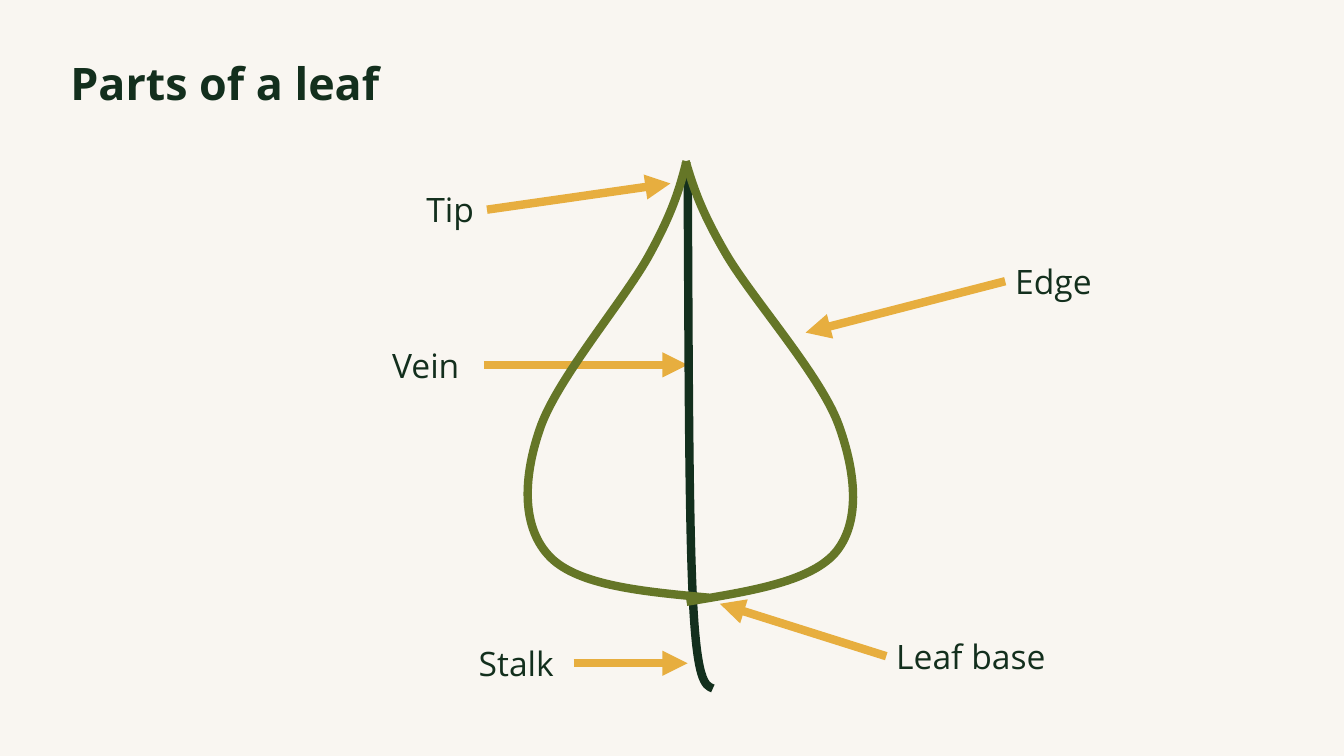
from dataclasses import dataclass

import pptx
import pptx.dml.color
import pptx.enum.shapes
import pptx.enum.text
import pptx.oxml
import pptx.oxml.ns
import pptx.util
from pptx.util import Inches

FONT = "Open Sans"
CREAM, DARK_GREEN, LEAF_GREEN, AMBER = "F9F6F1", "132F1D", "657627", "E7AE3F"
LINE_WIDTH = 6
LABEL_HEIGHT = 0.5
LEFT_SIDE, RIGHT_SIDE = 1, 3

Point = tuple[float, float]


@dataclass
class Label:
    text: str
    left: float
    top: float
    width: float
    arrow_side: int
    target: Point
    wrap: bool = False


@dataclass
class Curve:
    """A start point followed by three points for each Bezier segment."""
    color: str
    points: list[Point]


LABELS = [
    Label("Stalk", 4.65, 6.33, 1.04, RIGHT_SIDE, (6.82, 6.58)),
    Label("Tip", 4.13, 1.83, 0.7, RIGHT_SIDE, (6.65, 1.82)),
    Label("Edge", 9.97, 2.54, 0.99, LEFT_SIDE, (7.99, 3.3)),
    Label("Vein", 3.79, 3.37, 1.01, RIGHT_SIDE, (6.82, 3.62), wrap=True),
    Label("Leaf base", 8.79, 6.26, 1.79, LEFT_SIDE, (7.14, 5.99)),
]

VEIN_AND_STALK = Curve(DARK_GREEN, [
    (6.82, 1.68), (6.83, 3.36), (6.83, 5.04), (6.87, 5.9),
    (6.91, 6.76), (6.99, 6.8), (7.07, 6.83)])
LEFT_EDGE = Curve(LEAF_GREEN, [
    (6.81, 1.6), (6.75, 1.83), (6.69, 2.07), (6.45, 2.51),
    (6.21, 2.96), (5.51, 3.77), (5.35, 4.27),
    (5.18, 4.77), (5.18, 5.25), (5.46, 5.53),
    (5.74, 5.81), (6.38, 5.87), (7.03, 5.93)])
RIGHT_EDGE = Curve(LEAF_GREEN, [
    (6.8, 1.6), (6.87, 1.83), (6.94, 2.07), (7.19, 2.5),
    (7.44, 2.94), (8.14, 3.72), (8.32, 4.22),
    (8.5, 4.72), (8.53, 5.2), (8.28, 5.49),
    (8.02, 5.78), (7.41, 5.87), (6.81, 5.97)])


def rgb(value: str) -> pptx.dml.color.RGBColor:
    return pptx.dml.color.RGBColor.from_string(value)


def add_text(slide, text: str, left: float, top: float, width: float,
             height: float, size: int, bold: bool = False, wrap: bool = True):
    box = slide.shapes.add_textbox(
        Inches(left), Inches(top), Inches(width), Inches(height))
    box.text_frame.word_wrap = wrap
    box.text_frame.text = text
    font = box.text_frame.paragraphs[0].runs[0].font
    font.name, font.size, font.bold = FONT, pptx.util.Pt(size), bold
    font.color.rgb = rgb(DARK_GREEN)
    return box


def style_line(line, color: str) -> None:
    line.color.rgb = rgb(color)
    line.width = pptx.util.Pt(LINE_WIDTH)


def add_arrow(slide, box, label: Label) -> None:
    end_x, end_y = (Inches(value) for value in label.target)
    arrow = slide.shapes.add_connector(
        pptx.enum.shapes.MSO_CONNECTOR.STRAIGHT, 0, 0, end_x, end_y)
    arrow.begin_connect(box, label.arrow_side)
    style_line(arrow.line, AMBER)
    properties = arrow.element.spPr
    line_element = properties.find(pptx.oxml.ns.qn("a:ln"))
    line_element.append(pptx.oxml.parse_xml(
        f'<a:tailEnd {pptx.oxml.ns.nsdecls("a")} type="triangle"/>'))
    properties.append(pptx.oxml.parse_xml(
        f'<a:effectLst {pptx.oxml.ns.nsdecls("a")}/>'))


def add_curve(slide, curve: Curve) -> None:
    start, *rest = [(Inches(x), Inches(y)) for x, y in curve.points]
    builder = slide.shapes.build_freeform(*start)
    builder.add_line_segments(rest, close=False)
    shape = builder.convert_to_shape()
    shape.shadow.inherit = False
    shape.fill.background()
    style_line(shape.line, curve.color)

    # Merge every three straight segments into one Bezier segment
    segments = list(shape.element.iter(pptx.oxml.ns.qn("a:lnTo")))
    for index in range(0, len(segments), 3):
        bezier = pptx.oxml.parse_xml(
            f'<a:cubicBezTo {pptx.oxml.ns.nsdecls("a")}/>')
        segments[index].addprevious(bezier)
        for segment in segments[index:index + 3]:
            bezier.append(segment[0])
            segment.getparent().remove(segment)


def main() -> None:
    presentation = pptx.Presentation()
    presentation.slide_width = Inches(13.33)
    presentation.slide_height = Inches(7.5)
    slide = presentation.slides.add_slide(presentation.slide_layouts[6])
    slide.background.fill.solid()
    slide.background.fill.fore_color.rgb = rgb(CREAM)

    # Title
    title = add_text(slide, "Parts of a leaf", 0.6, 0.4, 6.06, 0.9, 32, bold=True)
    title.text_frame.vertical_anchor = pptx.enum.text.MSO_ANCHOR.MIDDLE
    title.text_frame.paragraphs[0].line_spacing = 0.9

    # Labels and their arrows
    boxes = []
    for label in LABELS:
        box = add_text(slide, label.text, label.left, label.top, label.width,
                       LABEL_HEIGHT, 24, wrap=label.wrap)
        box.text_frame.auto_size = pptx.enum.text.MSO_AUTO_SIZE.SHAPE_TO_FIT_TEXT
        boxes.append(box)
    for box, label in zip(boxes, LABELS):
        add_arrow(slide, box, label)

    # Leaf drawing
    for curve in (VEIN_AND_STALK, LEFT_EDGE, RIGHT_EDGE):
        add_curve(slide, curve)

    presentation.save("out.pptx")


if __name__ == "__main__":
    main()
